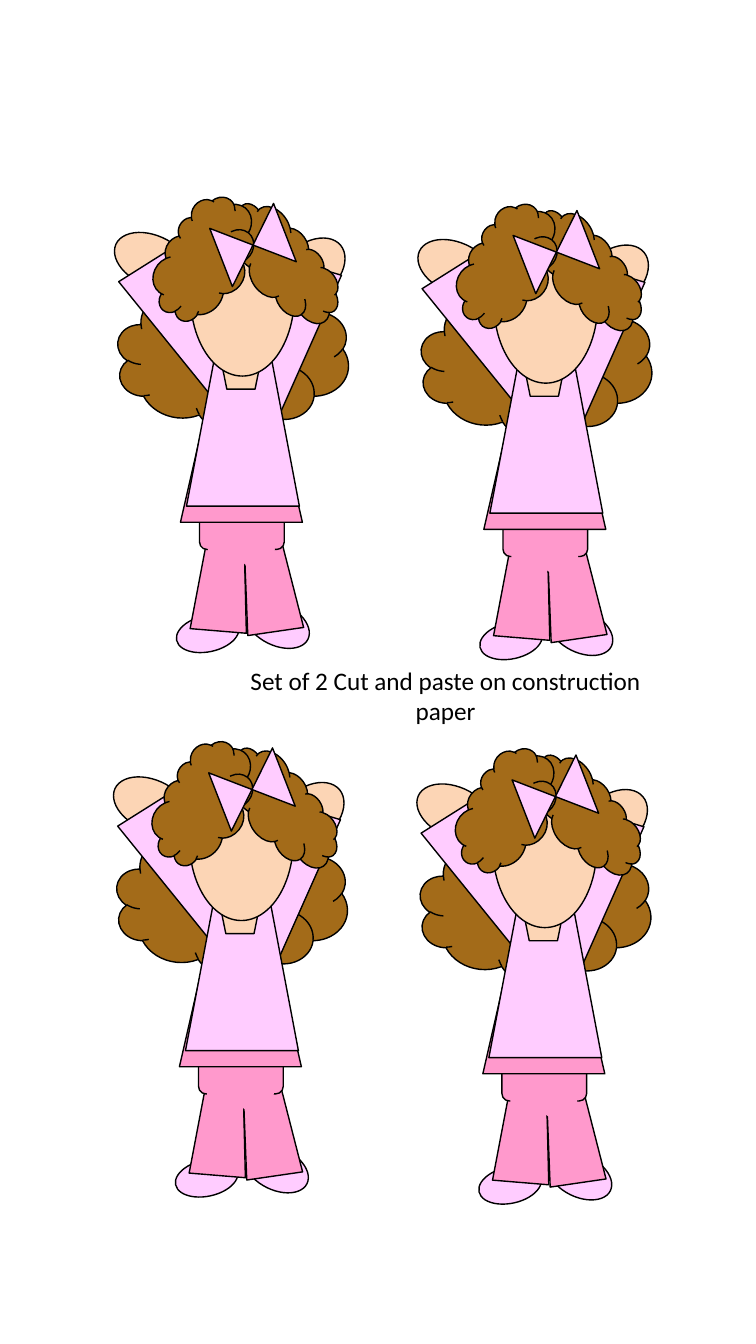
from pptx import Presentation
from pptx.dml.color import RGBColor
from pptx.enum.shapes import MSO_SHAPE as Shape
from pptx.enum.text import MSO_AUTO_SIZE as Fit, PP_ALIGN as Align
from pptx.util import Inches, Pt

BLACK = RGBColor(0x00, 0x00, 0x00)
HAIR = RGBColor(0xA3, 0x6B, 0x19)
LILAC = RGBColor(0xFF, 0xCC, 0xFF)
PINK = RGBColor(0xFF, 0x99, 0xCC)
SKIN = RGBColor(0xFC, 0xD5, 0xB5)

CLOUD, OVAL, TRAP = Shape.CLOUD, Shape.OVAL, Shape.TRAPEZOID
ROUND, BOW = Shape.ROUNDED_RECTANGLE, Shape.FLOWCHART_COLLATE

# Parts of one girl, back to front:
# kind, left, top, width, height, turn, flip, fill, line
PARTS = [
    # Long hair and shoes
    (CLOUD, 0.16, 0.83, 2.3, 1.45, 6, False, HAIR, BLACK),
    (OVAL, 1.54, 3.85, 0.42, 0.68, 116.2, False, LILAC, BLACK),
    (OVAL, 0.88, 3.97, 0.36, 0.63, 77.9, False, LILAC, BLACK),
    # Trousers: legs, hips, thighs
    (TRAP, 0.94, 2.94, 0.56, 1.32, 4.7, False, PINK, BLACK),
    (TRAP, 1.36, 2.95, 0.56, 1.32, 351.7, False, PINK, BLACK),
    (ROUND, 0.98, 3.01, 0.84, 0.44, 0, False, PINK, BLACK),
    (OVAL, 1.07, 3.27, 0.37, 0.35, 0, False, PINK, PINK),
    (OVAL, 1.35, 3.27, 0.37, 0.35, 0, False, PINK, PINK),
    # Hem
    (TRAP, 0.79, 1.86, 1.21, 1.32, 0, False, PINK, BLACK),
    # Arms: hand and sleeve, right then left
    (OVAL, 1.81, 0.29, 0.53, 0.79, 230.2, False, SKIN, BLACK),
    (TRAP, 1.43, 0.59, 0.76, 1.49, 196.7, True, LILAC, BLACK),
    (OVAL, 0.26, 0.19, 0.5, 0.79, 114.3, False, SKIN, BLACK),
    (TRAP, 0.52, 0.49, 0.71, 1.49, 147.8, False, LILAC, BLACK),
    # Shirt, neck, face
    (TRAP, 0.85, 1.54, 1.12, 1.48, 0, False, LILAC, BLACK),
    (TRAP, 1.11, 1.17, 0.56, 0.69, 180, False, SKIN, BLACK),
    (OVAL, 0.89, 0.15, 1.03, 1.58, 0, False, SKIN, BLACK),
    # Curls and bow
    (CLOUD, 1.1, 0.27, 1.41, 0.7, 54.7, False, HAIR, BLACK),
    (CLOUD, 0.39, 0.16, 1.3, 0.84, 308.1, False, HAIR, BLACK),
    (BOW, 1.2, 0.09, 0.62, 0.68, 68.7, True, LILAC, BLACK),
]


def add_part(group, x, y, part):
    kind, left, top, width, height, turn, flip, fill, line = part
    shape = group.shapes.add_shape(kind, Inches(x + left), Inches(y + top),
                                   Inches(width), Inches(height))
    shape.rotation = turn
    if flip:
        shape._element.spPr.get_or_add_xfrm().set("flipH", "1")
    shape.shadow.inherit = False
    shape.fill.solid()
    shape.fill.fore_color.rgb = fill
    shape.line.color.rgb = line
    shape.line.width = Pt(1)


def add_girl(slide, x, y):
    group = slide.shapes.add_group_shape()
    for part in PARTS:
        add_part(group, x, y, part)


def add_label(slide, text):
    box = slide.shapes.add_textbox(Inches(2.25), Inches(6.55),
                                   Inches(4.34), Inches(0.71))
    frame = box.text_frame
    frame.word_wrap = True
    frame.auto_size = Fit.SHAPE_TO_FIT_TEXT
    para = frame.paragraphs[0]
    para.alignment = Align.CENTER
    run = para.add_run()
    run.text = text
    run.font.name = "Calibri"
    run.font.size = Pt(18)
    run.font.color.rgb = BLACK


def main():
    deck = Presentation()
    deck.slide_width, deck.slide_height = Inches(7.5), Inches(13.33)
    slide = deck.slides.add_slide(deck.slide_layouts[6])

    # Two girls above the label, two below
    for x, y in [(1, 2), (4.01, 2.07), (0.99, 7.4), (4, 7.47)]:
        add_girl(slide, x, y)
    add_label(slide, "Set of 2 Cut and paste on construction paper")

    deck.save("out.pptx")


if __name__ == "__main__":
    main()
